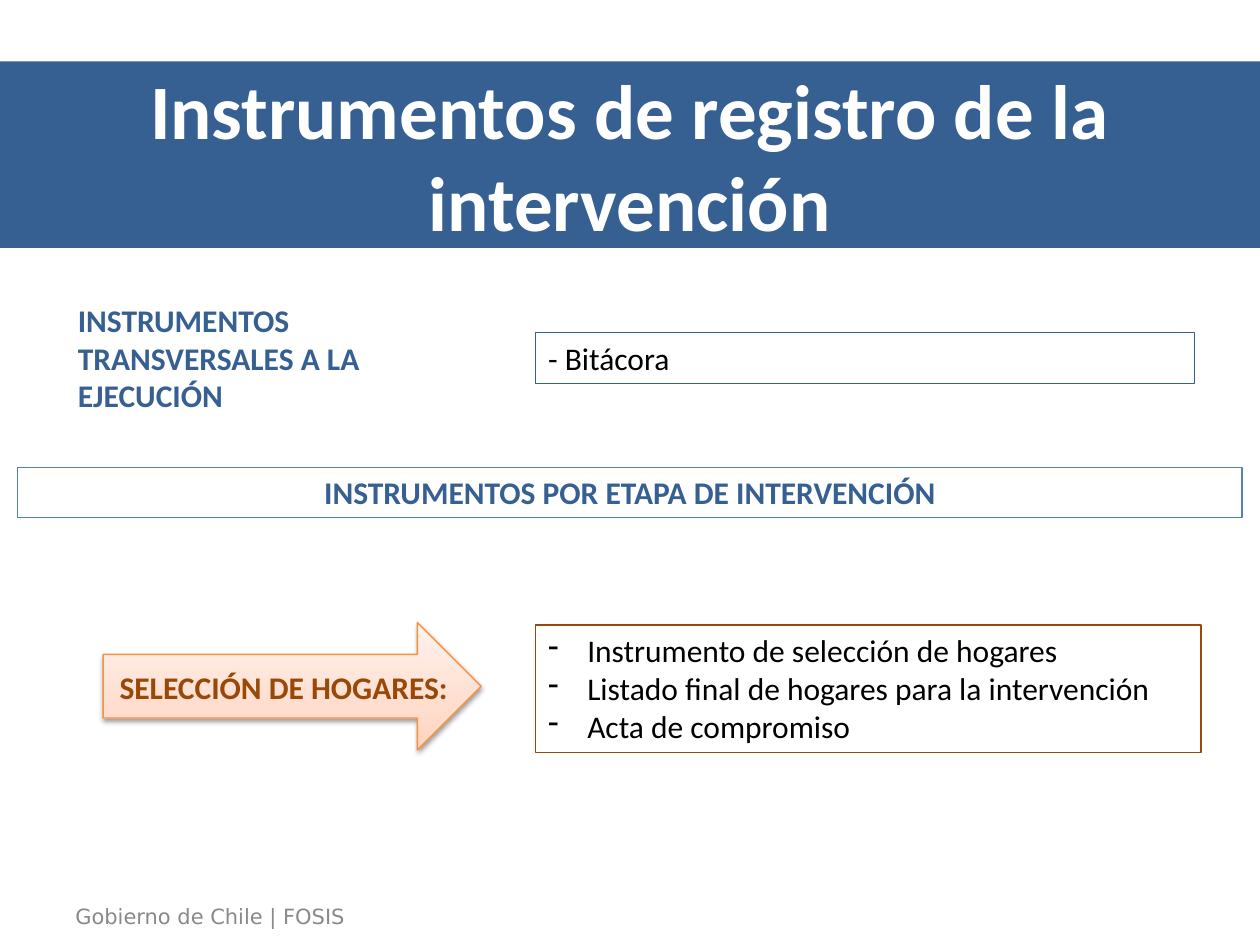
"""Builds a slide on the instruments used to record an intervention."""
from copy import deepcopy

from lxml.etree import SubElement
from pptx import Presentation
from pptx.dml.color import RGBColor
from pptx.enum.shapes import MSO_SHAPE
from pptx.enum.text import MSO_ANCHOR, MSO_AUTO_SIZE, PP_ALIGN
from pptx.oxml.ns import qn
from pptx.util import Cm, Pt

COLORS = {
    "navy": "376092", "blue": "4F81BD", "brown": "984807", "orange": "F69240",
    "gray": "898989", "black": "000000", "white": "FFFFFF",
}
ARROW_STOPS = [(0, "FFD2BD"), (0.35, "FFDED0"), (1, "FFF2ED")]

FOOTER = "Gobierno de Chile | FOSIS"
TITLE = "Instrumentos de registro de la intervención"
CROSS_LABEL = "INSTRUMENTOS TRANSVERSALES A LA EJECUCIÓN"
CROSS_TOOLS = "- Bitácora"
STAGE_HEADING = "INSTRUMENTOS POR ETAPA DE INTERVENCIÓN"
STAGE_LABEL = "SELECCIÓN DE HOGARES:"
STAGE_TOOLS = [
    "Instrumento de selección de hogares",
    "Listado final de hogares para la intervención",
    "Acta de compromiso",
]

SLIDE_W, SLIDE_H = 25.4, 19.05
TOOLS_X = 10.8
ROW_H, BLOCK_H = 1.02, 2.57
HEADING_MARGIN = 0.36


def rgb(name):
    return RGBColor.from_string(COLORS[name])


def add_bullet(p):
    pPr = p._p.get_or_add_pPr()
    pPr.set("marL", str(Cm(0.79)))
    pPr.set("indent", str(-Cm(0.79)))
    SubElement(pPr, qn("a:buChar"), char="-")


def write(sp, lines, color, size=18, bold=False, align=PP_ALIGN.LEFT,
          anchor=MSO_ANCHOR.TOP, font="Calibri", bullets=False, wrap=True):
    tf = sp.text_frame
    tf.text = "\n".join(lines)
    tf.word_wrap = wrap
    tf.vertical_anchor = anchor
    for p in tf.paragraphs:
        p.alignment = align
        if bullets:
            add_bullet(p)
        for r in p.runs:
            r.font.name = font
            r.font.size = Pt(size)
            r.font.bold = bold
            r.font.color.rgb = rgb(color)


def add_label(s, box, text, color, **style):
    sp = s.shapes.add_textbox(*map(Cm, box))
    write(sp, [text], color, **style)
    sp.text_frame.auto_size = MSO_AUTO_SIZE.SHAPE_TO_FIT_TEXT


def add_frame(s, box, lines, line, color, **style):
    sp = s.shapes.add_shape(MSO_SHAPE.RECTANGLE, *map(Cm, box))
    sp.shadow.inherit = False
    sp.fill.background()
    sp.line.color.rgb = rgb(line)
    sp.line.width = Pt(0.75)
    write(sp, lines, color, **style)
    sp.text_frame.auto_size = MSO_AUTO_SIZE.SHAPE_TO_FIT_TEXT


def add_title_band(s, box):
    sp = s.shapes.add_shape(MSO_SHAPE.RECTANGLE, *map(Cm, box))
    sp.shadow.inherit = False
    sp.fill.solid()
    sp.fill.fore_color.rgb = rgb("navy")
    sp.line.fill.background()
    write(sp, [TITLE], "white", size=44, bold=True, align=PP_ALIGN.CENTER,
          anchor=MSO_ANCHOR.MIDDLE)
    tf = sp.text_frame
    tf.margin_left = tf.margin_right = tf.margin_top = tf.margin_bottom = Cm(0.25)


def add_arrow(s, box):
    sp = s.shapes.add_shape(MSO_SHAPE.RIGHT_ARROW, *map(Cm, box))
    sp.line.color.rgb = rgb("orange")
    sp.line.width = Pt(0.75)
    sp.fill.gradient()
    sp.fill.gradient_angle = 90
    stops = sp._element.spPr.find(".//" + qn("a:gsLst"))
    stops.append(deepcopy(stops[0]))
    for stop, (position, color) in zip(sp.fill.gradient_stops, ARROW_STOPS):
        stop.position = position
        stop.color.rgb = RGBColor.from_string(color)
    sp.shadow.inherit = False
    effects = sp._element.spPr.find(qn("a:effectLst"))
    shadow = SubElement(effects, qn("a:outerShdw"), blurRad=str(Pt(3.1)),
                        dist=str(Pt(1.6)), dir="5400000", rotWithShape="0")
    tint = SubElement(shadow, qn("a:srgbClr"), val=COLORS["black"])
    SubElement(tint, qn("a:alpha"), val="38000")


def main():
    prs = Presentation()
    prs.slide_width, prs.slide_height = Cm(SLIDE_W), Cm(SLIDE_H)
    s = prs.slides.add_slide(prs.slide_layouts[6])

    add_label(s, (1.27, 18.08, 6.17, 0.76), FOOTER, "gray", size=12,
              font="DejaVu Sans", wrap=False)
    add_arrow(s, (2.08, 12.55, 7.62, BLOCK_H))
    add_title_band(s, (0, 1.24, SLIDE_W, 3.76))
    add_label(s, (1.32, 5.94, 8.38, BLOCK_H), CROSS_LABEL, "navy", bold=True)
    add_frame(s, (TOOLS_X, 6.71, 13.28, ROW_H), [CROSS_TOOLS], "navy", "black")
    add_frame(s, (HEADING_MARGIN, 9.42, SLIDE_W - 2 * HEADING_MARGIN, ROW_H),
              [STAGE_HEADING], "blue", "navy", bold=True, align=PP_ALIGN.CENTER)
    add_label(s, (2.16, 13.34, 7.67, ROW_H), STAGE_LABEL, "brown", bold=True)
    add_frame(s, (TOOLS_X, 12.6, 13.41, BLOCK_H), STAGE_TOOLS, "brown", "black",
              bullets=True)
    prs.save("out.pptx")


if __name__ == "__main__":
    main()
